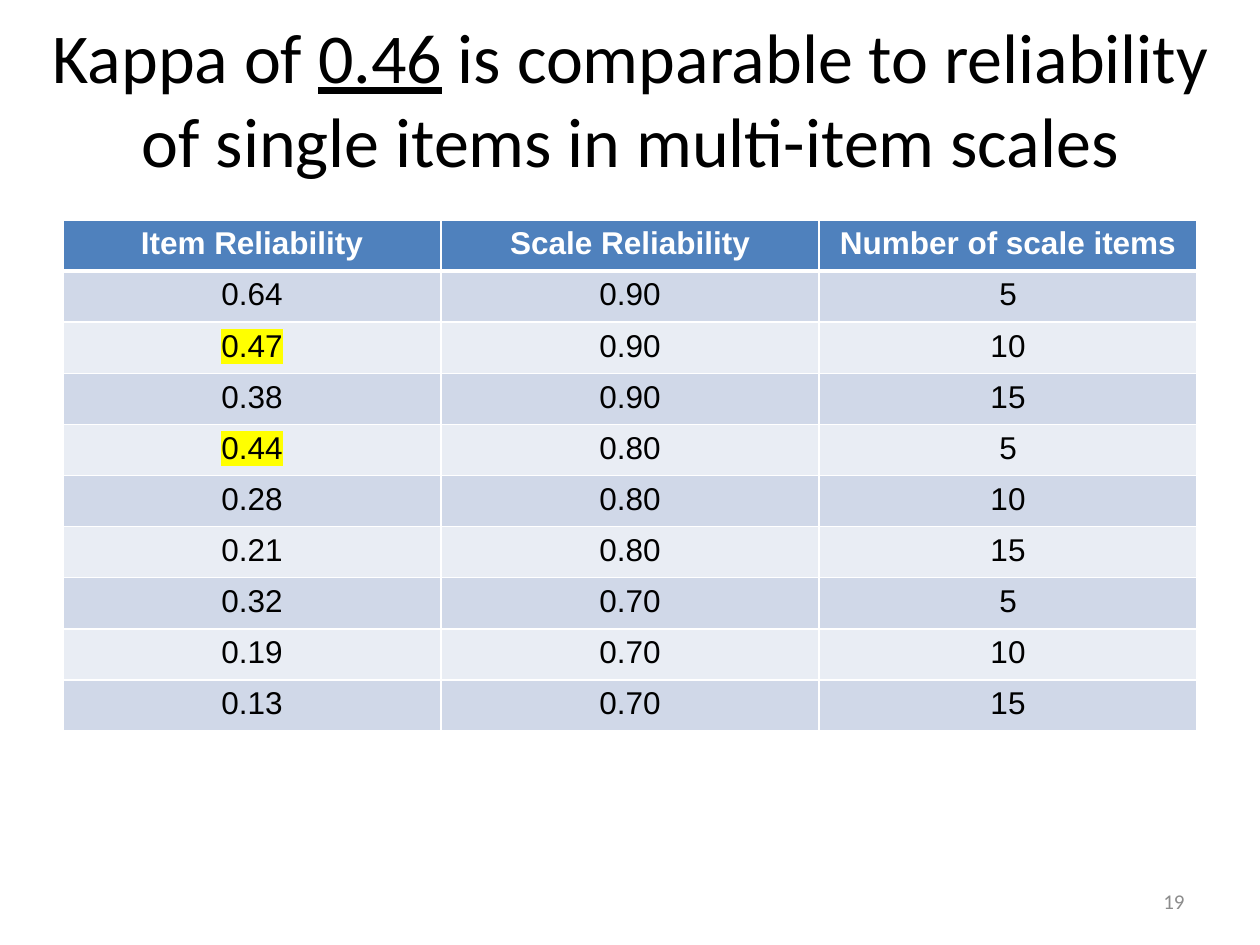
from pptx import Presentation
from pptx import util as u
from pptx.dml.color import RGBColor
from pptx.enum import text
from pptx.oxml import parse_xml
from pptx.oxml.ns import nsdecls

SCALE = 914400 / 126
WIDE, HIGH = 1260, 945
TITLE_ONLY = 5
BLACK, WHITE, GREY, BLUE = "000000", "FFFFFF", "8C8C8C", "4F81BD"
BANDS = "D0D8E8", "E9EDF4"
YELLOW = "FFFF00"

HEADS = "Item Reliability", "Scale Reliability", "Number of scale items"
GROUPS = {
    "0.90": ("0.64", "0.47", "0.38"),
    "0.80": ("0.44", "0.28", "0.21"),
    "0.70": ("0.32", "0.19", "0.13"),
}
COUNTS = "5", "10", "15"
MARKED = "0.47", "0.44"


def px(num):
    return u.Emu(round(num * SCALE))


def color(code):
    return RGBColor.from_string(code)


def apply(obj, **form):
    for name, value in form.items():
        setattr(obj, name, value)


class Deck:
    """Holds the text styles and the current slide."""

    title_font = dict(name="Calibri", size=u.Pt(40))
    cell_font = dict(name="Arial", size=u.Pt(18))
    note_font = dict(name="Calibri", size=u.Pt(12))

    def __init__(self):
        self.show = Presentation()
        apply(self.show, slide_width=px(WIDE), slide_height=px(HIGH))
        self.slide = self.show.slides.add_slide(self.show.slide_layouts[TITLE_ONLY])

    def run(self, para, words, ink, **form):
        run = para.add_run()
        run.text = words
        apply(run.font, **form)
        run.font.color.rgb = color(ink)
        return run

    def title(self, box, parts):
        """Fill the title from (words, underlined) pairs."""
        shape = self.slide.shapes.title
        apply(shape, **dict(zip(("left", "top", "width", "height"), map(px, box))))
        apply(shape.text_frame, word_wrap=True, auto_size=text.MSO_AUTO_SIZE.NONE,
              vertical_anchor=text.MSO_ANCHOR.MIDDLE)
        para = shape.text_frame.paragraphs[0]
        para.alignment = text.PP_ALIGN.CENTER
        for words, under in parts:
            self.run(para, words, BLACK, underline=under, **self.title_font)

    def note(self, box, words):
        frame = self.slide.shapes.add_textbox(*map(px, box)).text_frame
        apply(frame, word_wrap=True, vertical_anchor=text.MSO_ANCHOR.MIDDLE)
        para = frame.paragraphs[0]
        para.alignment = text.PP_ALIGN.RIGHT
        self.run(para, words, GREY, **self.note_font)

    def mark(self, run):
        """Highlight a run; the schema wants the mark right after the fill."""
        run.font.color.rgb = color(BLACK)
        fill = run._r.rPr.find("{*}solidFill")
        fill.addnext(parse_xml(
            f'<a:highlight {nsdecls("a")}><a:srgbClr val="{YELLOW}"/></a:highlight>'))

    def edges(self, cell, **widths):
        """Draw white cell borders, with widths in points by side."""
        props = cell._tc.get_or_add_tcPr()
        for spot, side in enumerate("LRTB"):
            props.insert(spot, parse_xml(
                f'<a:ln{side} {nsdecls("a")} w="{u.Pt(widths.get(side, 1))}">'
                f'<a:solidFill><a:srgbClr val="{WHITE}"/></a:solidFill></a:ln{side}>'))

    def cell(self, cell, words, row):
        head = row == 0
        cell.fill.solid()
        cell.fill.fore_color.rgb = color(BLUE if head else BANDS[(row - 1) % 2])
        para = cell.text_frame.paragraphs[0]
        para.alignment = text.PP_ALIGN.CENTER
        run = self.run(para, words, WHITE if head else BLACK, bold=head, **self.cell_font)
        if words in MARKED:
            self.mark(run)
        self.edges(cell, T=3 if row == 1 else 1, B=3 if head else 1)

    def table(self, box, rows):
        grid = self.slide.shapes.add_table(len(rows), len(rows[0]), *map(px, box)).table
        for row, line in enumerate(rows):
            for col, words in enumerate(line):
                self.cell(grid.cell(row, col), words, row)


def main():
    deck = Deck()
    deck.title((37, 19, 1187, 157), [
        ("Kappa of ", False),
        ("0.46", True),
        (" is comparable to reliability of single items in multi-item scales", False),
    ])
    rows = [(item, scale, count) for scale, items in GROUPS.items()
            for item, count in zip(items, COUNTS)]
    deck.table((63, 220, 1134, 511), [HEADS] + rows)
    deck.note((903, 876, 294, 50), "19")
    deck.show.save("out.pptx")


if __name__ == "__main__":
    main()
